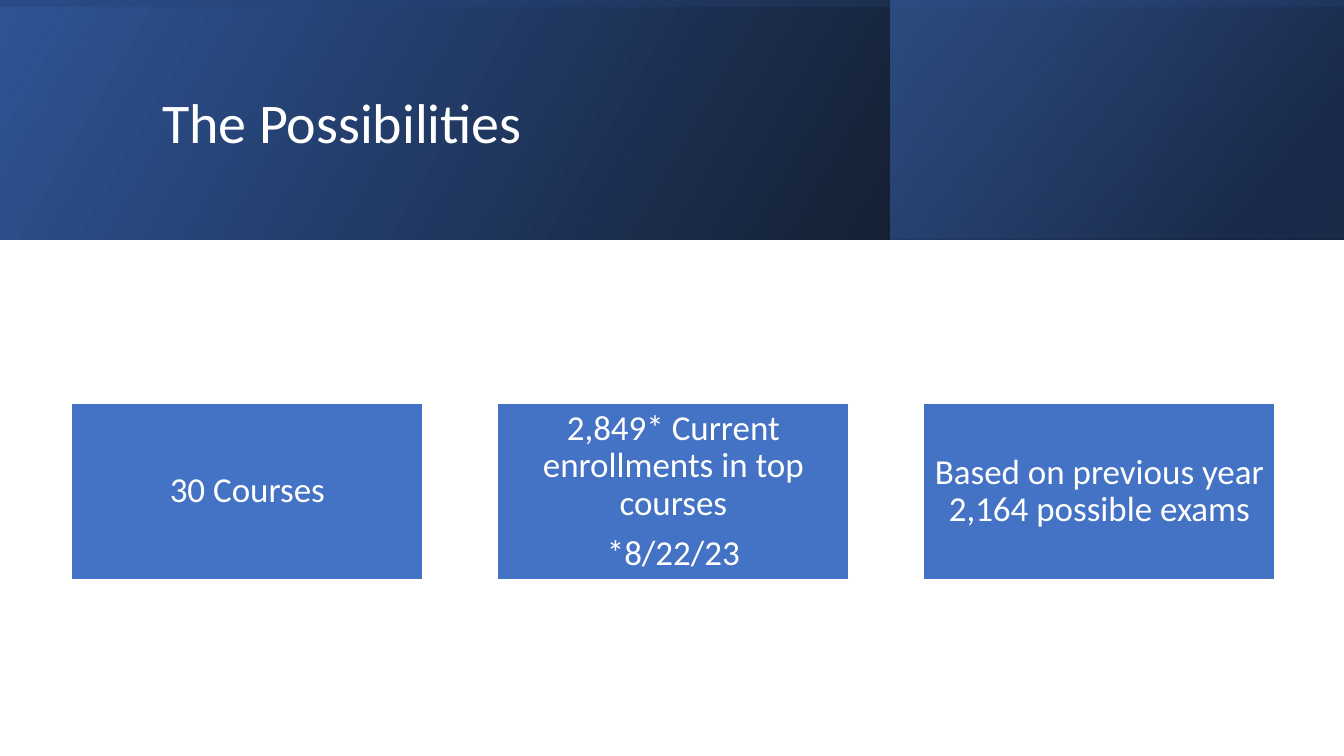
from lxml import etree
from pptx import Presentation
from pptx.dml.color import RGBColor
from pptx.enum.shapes import MSO_SHAPE
from pptx.enum.text import MSO_ANCHOR, PP_ALIGN
from pptx.oxml.ns import qn
from pptx.util import Pt

RECT = MSO_SHAPE.RECTANGLE
MIDDLE = MSO_ANCHOR.MIDDLE
CENTER = PP_ALIGN.CENTER

WHITE = RGBColor(0xFF, 0xFF, 0xFF)
BLACK = RGBColor(0x00, 0x00, 0x00)
BLUE = RGBColor(0x44, 0x72, 0xC4)
DEEP_BLUE = RGBColor(0x2F, 0x55, 0x97)
NAVY = RGBColor(0x20, 0x38, 0x64)
FONT = "Calibri"

TITLE = "The Possibilities"
CARDS = [
    ["30 Courses"],
    ["2,849* Current enrollments in top courses", "*8/22/23"],
    ["Based on previous year 2,164 possible exams"],
]

SLIDE_W, SLIDE_H = 960, 540
BAND_H = 170.8
ACCENT_X = 636.2
CARD_X, CARD_Y, CARD_W, CARD_H = 51, 288.3, 251.3, 125.7
CARD_PITCH = 304.3

# left, top, width, height, rotation, angle, stops (position %, colour, opacity %)
BAND_LAYERS = [
    (0, 0, SLIDE_W, BAND_H, 0, 330,
     [(0, BLACK, 96), (100, DEEP_BLUE, 100)]),
    (ACCENT_X, 0, SLIDE_W - ACCENT_X, BAND_H, 0, 320,
     [(19, NAVY, 68), (100, BLUE, 48)]),
    ((SLIDE_W - BAND_H) / 2, (BAND_H - SLIDE_W) / 2, BAND_H, SLIDE_W, 270, 350,
     [(23, DEEP_BLUE, 16), (99, BLACK, 45)]),
]


def add_rect(slide, x, y, w, h):
    s = slide.shapes.add_shape(RECT, Pt(x), Pt(y), Pt(w), Pt(h))
    s.shadow.inherit = False
    return s


def set_gradient(s, angle, stops):
    """Fill with a linear gradient whose stops carry their own opacity."""
    s.fill.gradient()
    grad = s._element.spPr.find(qn("a:gradFill"))
    for child in list(grad):
        grad.remove(child)
    stop_list = etree.SubElement(grad, qn("a:gsLst"))
    for position, color, opacity in stops:
        gs = etree.SubElement(stop_list, qn("a:gs"), pos=str(position * 1000))
        clr = etree.SubElement(gs, qn("a:srgbClr"), val=str(color))
        if opacity < 100:
            etree.SubElement(clr, qn("a:alpha"), val=str(opacity * 1000))
    etree.SubElement(grad, qn("a:lin"), ang=str(angle * 60000), scaled="0")


def write(tf, lines, size, align=None, space_after=0):
    tf.word_wrap = True
    tf.vertical_anchor = MIDDLE
    for i, line in enumerate(lines):
        p = tf.add_paragraph() if i else tf.paragraphs[0]
        p.text = line
        p.alignment = align
        p.line_spacing = 0.9
        p.space_after = Pt(space_after)
        p.font.name = FONT
        p.font.size = Pt(size)
        p.font.color.rgb = WHITE


prs = Presentation()
prs.slide_width, prs.slide_height = Pt(SLIDE_W), Pt(SLIDE_H)
slide = prs.slides.add_slide(prs.slide_layouts[6])

for x, y, w, h, rotation, angle, stops in BAND_LAYERS:
    s = add_rect(slide, x, y, w, h)
    s.rotation = rotation
    s._element.spPr.find(qn("a:xfrm")).set("flipH", "1")
    set_gradient(s, angle, stops)
    s.line.fill.background()

title = slide.shapes.add_textbox(Pt(108.7), Pt(27.4), Pt(765.4), Pt(123.8))
write(title.text_frame, [TITLE], 40)

for i, lines in enumerate(CARDS):
    s = add_rect(slide, CARD_X + i * CARD_PITCH, CARD_Y, CARD_W, CARD_H)
    s.fill.solid()
    s.fill.fore_color.rgb = BLUE
    s.line.color.rgb = WHITE
    s.line.width = Pt(1)
    tf = s.text_frame
    tf.margin_left = tf.margin_right = tf.margin_top = tf.margin_bottom = Pt(1.5)
    write(tf, lines, 25, CENTER, 8.75)

prs.save("out.pptx")
